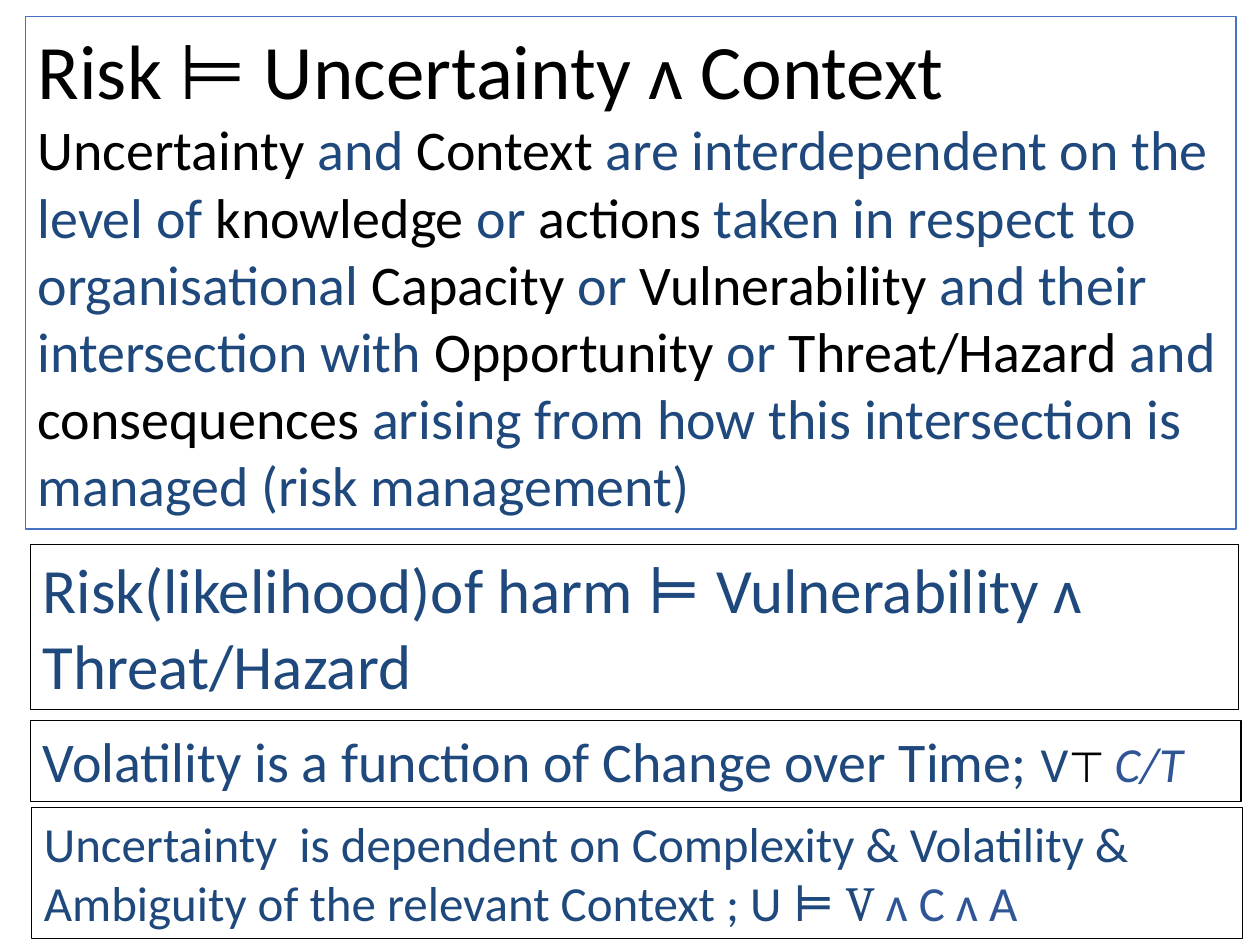
from pptx import Presentation
from pptx import util as u
from pptx.dml.color import RGBColor
from pptx.enum import text as t

BLACK = RGBColor(0x00, 0x00, 0x00)
NAVY = RGBColor(0x1F, 0x49, 0x7D)
BLUE = RGBColor(0x2F, 0x55, 0x97)
EDGE = RGBColor(0x44, 0x72, 0xC4)

deck = Presentation()
deck.slide_width = u.Inches(10)
deck.slide_height = u.Inches(7.5)
slide = deck.slides.add_slide(deck.slide_layouts[6])


def add_box(left, top, width, height, edge):
    box = slide.shapes.add_textbox(*map(u.Inches, (left, top, width, height)))
    box.line.color.rgb = edge
    box.line.width = u.Pt(0.75)
    frame = box.text_frame
    frame.word_wrap = True
    frame.auto_size = t.MSO_AUTO_SIZE.SHAPE_TO_FIT_TEXT
    return frame


def add_run(para, words, size, color=NAVY, face="Calibri", slant=False):
    run = para.add_run()
    run.text = words
    run.font.size = u.Pt(size)
    run.font.color.rgb = color
    run.font.name = face
    run.font.italic = slant


risk = add_box(0.2, 0.13, 9.61, 4.07, EDGE)
add_run(risk.paragraphs[0], "Risk ⊨ Uncertainty ʌ Context", 44, BLACK)
body = risk.add_paragraph()
pairs = [
    ("Uncertainty", " and "),
    ("Context", " are interdependent on the level of "),
    ("knowledge", " or "),
    ("actions", " taken in respect to organisational "),
    ("Capacity", " or "),
    ("Vulnerability", " and their intersection with "),
    ("Opportunity", " or "),
    ("Threat/Hazard", " and "),
    ("consequences", " arising from how this intersection is managed (risk management)"),
]
for term, link in pairs:
    add_run(body, term, 32, BLACK)
    add_run(body, link, 32)

rules = [
    ((0.24, 4.32, 9.59, 1.31), [
        ("Risk(likelihood)of harm ", 36),
        ("⊨", 36, NAVY, "Cambria"),
        (" Vulnerability ʌ Threat/Hazard", 36),
    ]),
    ((0.24, 5.72, 9.61, 0.64), [
        ("Volatility is a function of Change over Time; ", 32),
        ("V", 28),
        ("⊤ ", 24, BLACK, "Calibri", True),
        ("C/T", 28, BLUE, "Calibri", True),
    ]),
    ((0.25, 6.41, 9.61, 1.04), [
        ("Uncertainty  is dependent on Complexity & Volatility & "
         "Ambiguity of the relevant Context ; U ", 28),
        ("⊨ V ", 28, NAVY, "Cambria"),
        ("ʌ C ʌ A", 28, BLUE),
    ]),
]
for place, runs in rules:
    para = add_box(*place, BLACK).paragraphs[0]
    para.space_before = para.space_after = u.Pt(5)
    for run in runs:
        add_run(para, *run)

deck.save("out.pptx")
